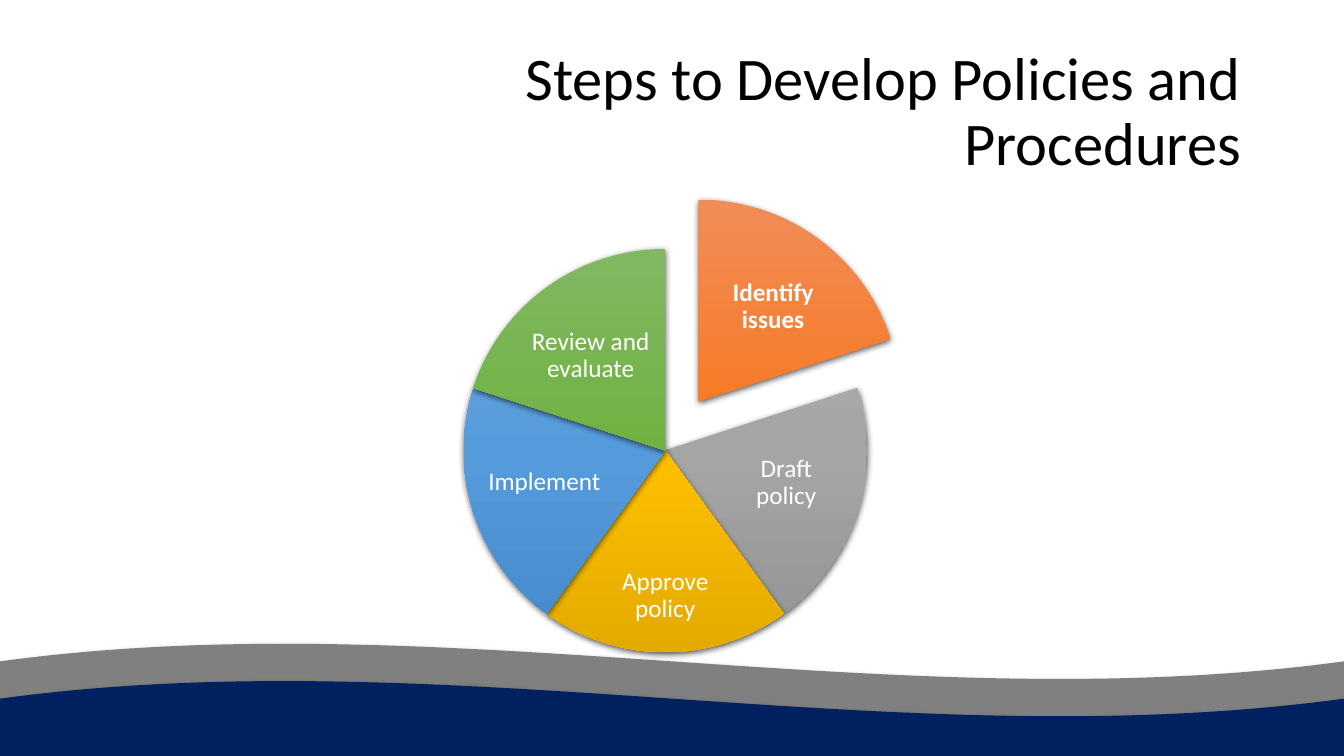
import copy

import pptx
import pptx.util
from lxml import etree
from pptx.dml.color import RGBColor
from pptx.enum.shapes import MSO_SHAPE
from pptx.enum.text import MSO_ANCHOR, PP_ALIGN
from pptx.oxml.ns import qn

# Content: label, gradient, label centre (in radii from the pie's centre), label size (in cells)
TITLE = "Steps to Develop Policies and Procedures"
STEPS = [
    ("Identify issues", ("F18C57", "F67B28", "E56C19"), (0.37, -0.47), (4.08, 2.8)),
    ("Draft policy", ("AFAFAF", "A5A5A5", "939393"), (0.6, 0.16), (3.57, 3)),
    ("Approve policy", ("FFC64B", "FFC000", "E3AB00"), (0, 0.72), (4.3, 2.6)),
    ("Implement", ("71A6DB", "559BDB", "448ACA"), (-0.6, 0.16), (3.57, 3)),
    ("Review and evaluate", ("81B861", "6FB242", "62A336"), (-0.37, -0.47), (4.08, 2.8)),
]
HIGHLIGHT = 0

THEME = {
    "font": "Calibri", "title": 43.2, "label": 18,
    "ink": "000000", "label_ink": "FFFFFF", "waves": ("808080", "002060"),
}

# Grid of square cells
COLS, ROWS = 40, 22.5
CELL = pptx.util.Inches(1) / 3
TITLE_BOX = (8.73, 1.2, 28.5, 4.35)
WAVE_TOP, WAVE_STEP, WAVE_HEIGHT = 19.14, 1.11, 4.35
CENTRE, RADIUS = (19.8, 13.41), 6
PULL_OUT = (0.99, -1.47)
# Pie adjustments count a full turn as 216; the top of the circle is 162
TURN, TOP = 216, 162


def cells(*values):
    return [pptx.util.Emu(round(v * CELL)) for v in values]


def rgb(colour):
    return RGBColor.from_string(colour)


def add_text(shapes, text, box, size, colour, align, bold=False, inset=0.1):
    tb = shapes.add_textbox(*cells(*box))
    tf = tb.text_frame
    tf.word_wrap = True
    tf.vertical_anchor = MSO_ANCHOR.MIDDLE
    tf.margin_left = tf.margin_right = pptx.util.Inches(inset)
    tf.margin_top = tf.margin_bottom = pptx.util.Inches(inset / 2)
    p = tf.paragraphs[0]
    p.alignment = align
    p.line_spacing = 0.9
    r = p.add_run()
    r.text = text
    r.font.name = THEME["font"]
    r.font.size = pptx.util.Pt(size)
    r.font.bold = bold
    r.font.color.rgb = rgb(colour)


def add_shadow(sp, alpha, blur, dist):
    sp.shadow.inherit = False
    effects = sp._element.spPr.find(qn("a:effectLst"))
    shadow = etree.SubElement(
        effects, qn("a:outerShdw"), blurRad=str(pptx.util.Pt(blur)),
        dist=str(pptx.util.Pt(dist)), dir="5400000", algn="ctr", rotWithShape="0")
    colour = etree.SubElement(shadow, qn("a:srgbClr"), val="000000")
    etree.SubElement(colour, qn("a:alpha"), val=str(alpha * 1000))


def fill_gradient(sp, colours):
    sp.fill.gradient()
    stops = sp._element.spPr.find(".//" + qn("a:gsLst"))
    stops.append(copy.deepcopy(stops[-1]))
    for i, (stop, colour) in enumerate(zip(sp.fill.gradient_stops, colours)):
        stop.position = i / 2
        stop.color.rgb = rgb(colour)
    sp.fill.gradient_angle = 270


def add_waves(s):
    for i, colour in enumerate(THEME["waves"]):
        box = cells(0, WAVE_TOP + i * WAVE_STEP, COLS, WAVE_HEIGHT)
        sp = s.shapes.add_shape(MSO_SHAPE.WAVE, *box)
        sp.fill.solid()
        sp.fill.fore_color.rgb = rgb(colour)
        sp.line.fill.background()
        add_shadow(sp, 32, 3.5, 2.2)


def add_pie(s):
    shapes = s.shapes.add_group_shape().shapes
    sweep = TURN / len(STEPS)
    for i, (label, colours, offset, (w, h)) in enumerate(STEPS):
        pull = PULL_OUT if i == HIGHLIGHT else (0, 0)
        x, y = CENTRE[0] + pull[0], CENTRE[1] + pull[1]

        # Slice
        sp = shapes.add_shape(
            MSO_SHAPE.PIE, *cells(x - RADIUS, y - RADIUS, 2 * RADIUS, 2 * RADIUS))
        sp.adjustments[0] = (TOP + i * sweep) % TURN
        sp.adjustments[1] = (TOP + (i + 1) * sweep) % TURN
        fill_gradient(sp, colours)
        sp.line.fill.background()
        add_shadow(sp, 63, 4.5, 1.5)

        # Label
        left = x + offset[0] * RADIUS - w / 2
        top = y + offset[1] * RADIUS - h / 2
        add_text(shapes, label, (left, top, w, h), THEME["label"], THEME["label_ink"],
                 PP_ALIGN.CENTER, bold=i == HIGHLIGHT, inset=0.03)


def main():
    prs = pptx.Presentation()
    prs.slide_width, prs.slide_height = cells(COLS, ROWS)
    s = prs.slides.add_slide(prs.slide_layouts[6])
    add_waves(s)
    add_text(s.shapes, TITLE, TITLE_BOX, THEME["title"], THEME["ink"], PP_ALIGN.RIGHT)
    add_pie(s)
    prs.save("out.pptx")


if __name__ == "__main__":
    main()
